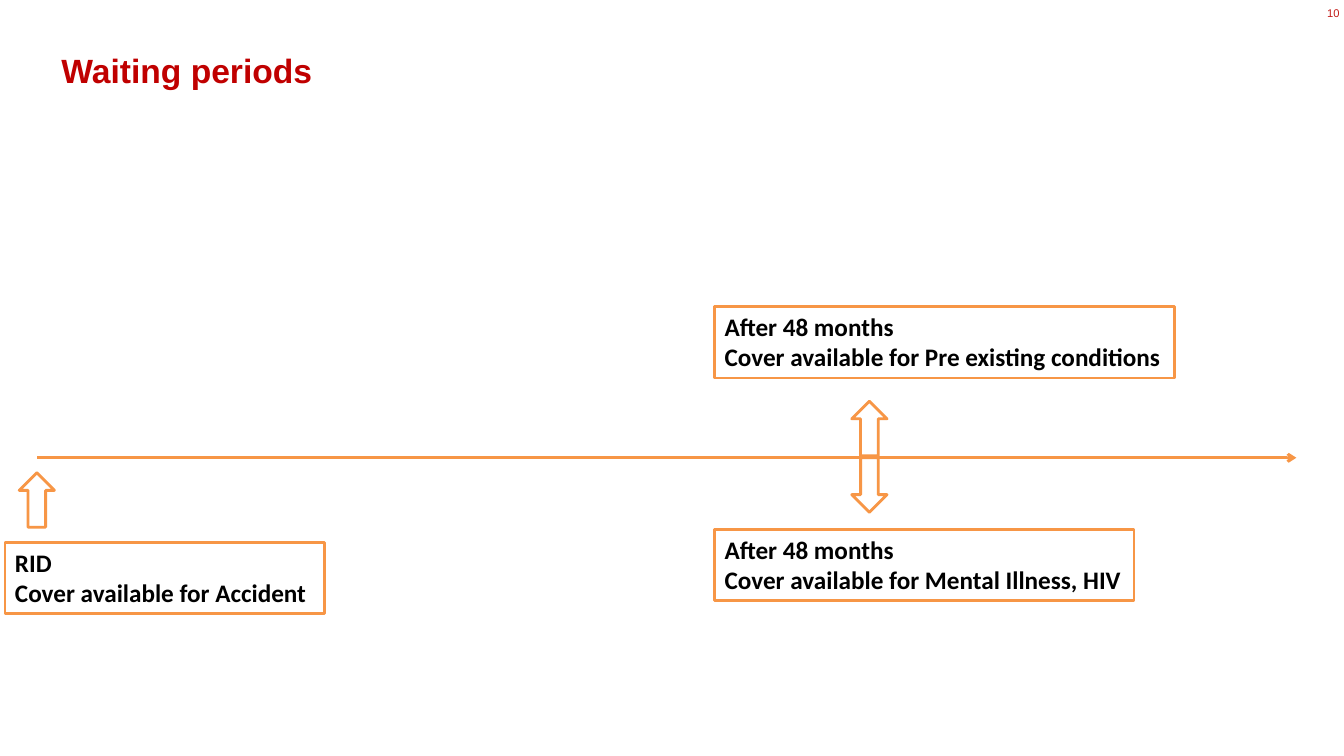
from lxml import etree
from pptx import Presentation
from pptx.dml.color import RGBColor
from pptx.enum.shapes import MSO_CONNECTOR as Connector, MSO_SHAPE as Shape
from pptx.enum.text import MSO_ANCHOR as Anchor, MSO_AUTO_SIZE as AutoSize, PP_ALIGN as Align
from pptx.oxml.ns import qn
from pptx.util import Pt

ORANGE = RGBColor(0xF7, 0x96, 0x46)
TITLE_RED = RGBColor(0xC0, 0x00, 0x00)
NUMBER_RED = RGBColor(0xC2, 0x1B, 0x17)
WHITE = RGBColor(0xFF, 0xFF, 0xFF)
BLACK = RGBColor(0x00, 0x00, 0x00)

LINE_WIDTH = 2
AXIS = (26.5, 327, 899.5)
ARROW_SIZE = (25.2, 38.9)
LABEL_HEIGHT = 51.1

# Arrow centre, arrow top, rotation, label left, top and width, label text
MILESTONES = [
    (26.3, 337.7, 0, 3.6, 387.4, 228.2, "RID\nCover available for Accident"),
    (621, 286.6, 0, 510.5, 218.9, 328.3,
     "After 48 months\nCover available for Pre existing conditions"),
    (621, 327, 180, 510.5, 378, 299.5,
     "After 48 months\nCover available for Mental Illness, HIV"),
]


def format_text(text_frame, font_name, size, color, bold, alignment=Align.LEFT):
    for paragraph in text_frame.paragraphs:
        paragraph.alignment = alignment
        for run in paragraph.runs:
            run.font.name = font_name
            run.font.size = Pt(size)
            run.font.color.rgb = color
            run.font.bold = bold


def add_page_number(slide, left, top, width, height):
    box = slide.shapes.add_textbox(Pt(left), Pt(top), Pt(width), Pt(height))
    frame = box.text_frame
    frame.margin_left = frame.margin_right = frame.margin_top = frame.margin_bottom = 0
    frame.word_wrap = True
    frame.text = "10"
    format_text(frame, "Arial", 8, NUMBER_RED, False, Align.RIGHT)


def fill_title(slide, left, top, width, height):
    title = slide.shapes.title
    title.left, title.top, title.width, title.height = Pt(left), Pt(top), Pt(width), Pt(height)
    frame = title.text_frame
    frame.text = "Waiting periods"
    frame.vertical_anchor = Anchor.MIDDLE
    frame.auto_size = AutoSize.NONE
    frame.paragraphs[0].line_spacing = Pt(22)
    format_text(frame, "Arial", 24, TITLE_RED, True)


def add_time_axis(slide, left, top, width):
    axis = slide.shapes.add_connector(
        Connector.STRAIGHT, Pt(left), Pt(top), Pt(left + width), Pt(top))
    axis.line.color.rgb = ORANGE
    axis.line.width = Pt(LINE_WIDTH)
    etree.SubElement(axis.line._get_or_add_ln(), qn("a:tailEnd"), type="arrow")
    etree.SubElement(axis._element.spPr, qn("a:effectLst"))


def add_outlined_shape(slide, preset, left, top, width, height):
    shape = slide.shapes.add_shape(preset, Pt(left), Pt(top), Pt(width), Pt(height))
    shape.shadow.inherit = False
    shape.fill.solid()
    shape.fill.fore_color.rgb = WHITE
    shape.line.color.rgb = ORANGE
    shape.line.width = Pt(LINE_WIDTH)
    return shape


def add_milestone(slide, center, arrow_top, rotation, left, top, width, text):
    arrow_width, arrow_height = ARROW_SIZE
    arrow = add_outlined_shape(slide, Shape.UP_ARROW, center - arrow_width / 2,
                               arrow_top, arrow_width, arrow_height)
    arrow.rotation = rotation
    label = add_outlined_shape(slide, Shape.RECTANGLE, left, top, width, LABEL_HEIGHT)
    frame = label.text_frame
    frame.word_wrap = False
    frame.auto_size = AutoSize.SHAPE_TO_FIT_TEXT
    frame.vertical_anchor = Anchor.TOP
    frame.text = text
    format_text(frame, "Calibri", 18, BLACK, True)


def build_waiting_periods(presentation):
    slide = presentation.slides.add_slide(presentation.slide_layouts.get_by_name("Title Only"))
    add_page_number(slide, 936, 4.3, 20.9, 13.7)
    fill_title(slide, 36.7, 34.6, 880.6, 38.2)
    add_time_axis(slide, *AXIS)
    for milestone in MILESTONES:
        add_milestone(slide, *milestone)


def main():
    presentation = Presentation()
    presentation.slide_width, presentation.slide_height = Pt(960), Pt(540)
    build_waiting_periods(presentation)
    presentation.save("out.pptx")


if __name__ == "__main__":
    main()
